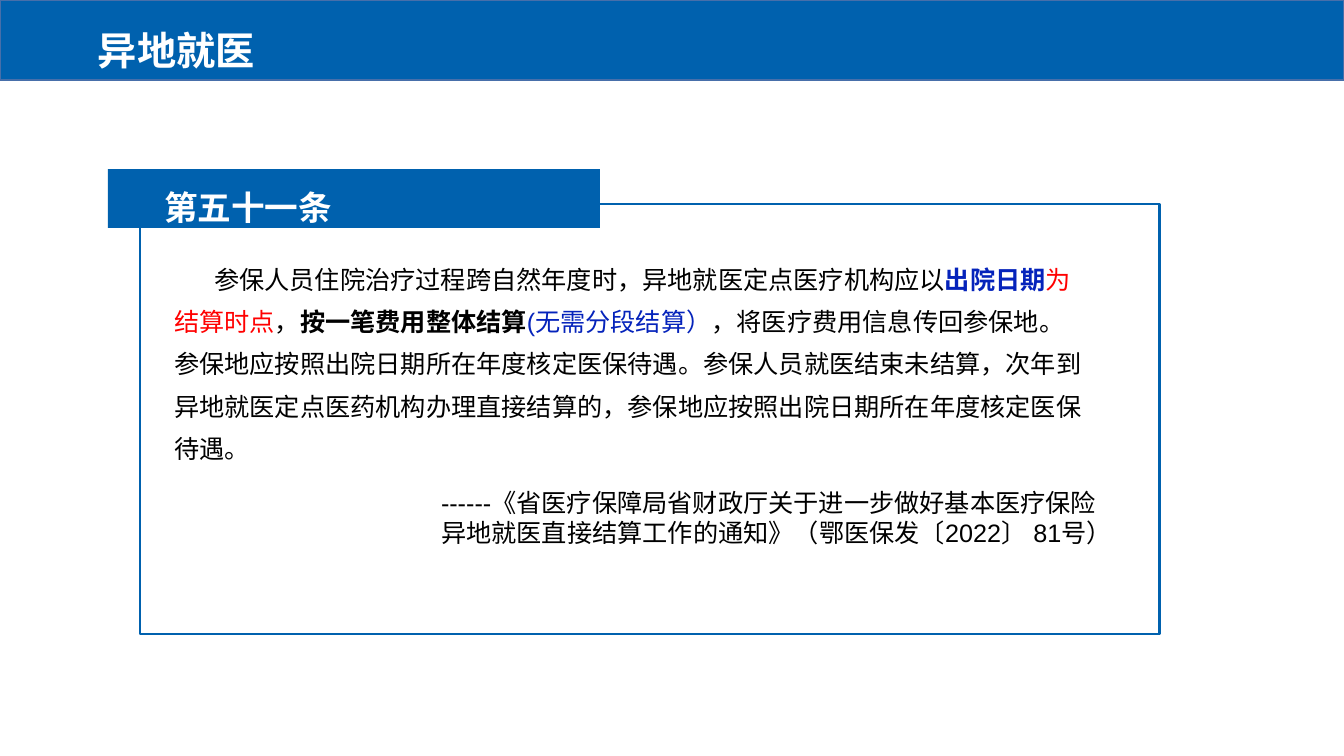
from lxml import etree
from pptx import Presentation
from pptx.dml.color import RGBColor
from pptx.enum.shapes import MSO_SHAPE
from pptx.enum.text import MSO_ANCHOR
from pptx.oxml.ns import qn
from pptx.util import Pt

PX = 914400 / 100.8
RECTANGLE = MSO_SHAPE.RECTANGLE
TOP, MIDDLE = MSO_ANCHOR.TOP, MSO_ANCHOR.MIDDLE
BLUE = RGBColor(0x00, 0x61, 0xAE)
BAND_EDGE = RGBColor(0x47, 0x6F, 0xAA)
INK_BLUE = RGBColor(0x05, 0x23, 0xBB)
RED = RGBColor(0xFF, 0x00, 0x00)
BLACK = RGBColor(0x00, 0x00, 0x00)
WHITE = RGBColor(0xFF, 0xFF, 0xFF)
LATIN, CJK = "Arial", "Noto Sans CJK SC"

ARTICLE = [
    ("参保人员住院治疗过程跨自然年度时，异地就医定点医疗机构应以", {}),
    ("出院日期", {"color": INK_BLUE, "bold": True}),
    ("为结算时点", {"color": RED}),
    ("，", {}),
    ("按一笔费用整体结算", {"bold": True}),
    ("(无需分段结算）", {"color": INK_BLUE}),
    ("，将医疗费用信息传回参保地。参保地应按照出院日期所在年度核定医保待遇。"
     "参保人员就医结束未结算，次年到异地就医定点医药机构办理直接结算的，"
     "参保地应按照出院日期所在年度核定医保待遇。", {}),
]
CITATION = [
    ("------《省医疗保障局省财政厅关于进一步做好基本医疗保险"
     "异地就医直接结算工作的通知》（鄂医保发", {}),
    ("〔", {"font": CJK}),
    ("2022", {}),
    ("〕", {"font": CJK}),
    (" 81号）", {}),
]


def px(length):
    """Turn a length in px into EMU."""
    return round(length * PX)


def add_rectangle(slide, box, fill=None, line=None, weight=1):
    """Add a plain rectangle with an optional fill and outline."""
    rectangle = slide.shapes.add_shape(RECTANGLE, *map(px, box))
    rectangle.shadow.inherit = False
    if fill is None:
        rectangle.fill.background()
    else:
        rectangle.fill.solid()
        rectangle.fill.fore_color.rgb = fill
    if line is None:
        rectangle.line.fill.background()
    else:
        rectangle.line.color.rgb = line
        rectangle.line.width = Pt(weight)


def add_text(slide, box, runs, size=18, color=BLACK, bold=False, spacing=1.0,
             indent=0, inset=(10, 5), anchor=TOP, wrap=True):
    """Add one paragraph whose runs may override colour, weight and font."""
    frame = slide.shapes.add_textbox(*map(px, box)).text_frame
    frame.word_wrap = wrap
    frame.vertical_anchor = anchor
    frame.margin_left = frame.margin_right = px(inset[0])
    frame.margin_top = frame.margin_bottom = px(inset[1])
    paragraph = frame.paragraphs[0]
    paragraph.line_spacing = spacing
    if indent:
        paragraph._p.get_or_add_pPr().set("indent", str(px(indent)))
    for words, style in runs:
        run = paragraph.add_run()
        run.text = words
        run.font.size = Pt(size)
        run.font.bold = style.get("bold", bold)
        run.font.color.rgb = style.get("color", color)
        run.font.name = style.get("font", LATIN)
        east_asian = etree.SubElement(run._r.get_or_add_rPr(), qn("a:ea"))
        east_asian.set("typeface", run.font.name)


def add_title_band(slide, box, title):
    """Draw the blue band across the top with the slide title."""
    left, top, width, height = box
    add_rectangle(slide, box, fill=BLUE, line=BAND_EDGE)
    add_text(slide, (left + 88, top + 10, 188, height), [(title, {})],
             size=28, color=WHITE, bold=True, anchor=MIDDLE, wrap=False)


def add_article_panel(slide, box, heading, article, citation):
    """Draw the framed article with its heading tab and its citation."""
    left, top, width, height = box
    add_text(slide, (left + 24, top + 43, 935, 225), article,
             spacing=1.4, indent=40)
    add_text(slide, (left + 291, top + 278, 693, 102), citation)
    add_rectangle(slide, box, line=BLUE, weight=2)
    add_rectangle(slide, (left - 32, top - 35, 492, 59), fill=BLUE)
    add_text(slide, (left + 24, top - 33, 168, 56), [(heading, {})], size=24,
             color=WHITE, bold=True, spacing=1.4, inset=(0, 0), wrap=False)


def main():
    """Build the slide and save it."""
    deck = Presentation()
    deck.slide_width, deck.slide_height = px(1344), px(756)
    slide = deck.slides.add_slide(deck.slide_layouts[6])
    add_title_band(slide, (0, 0, 1344, 80), "异地就医")
    add_article_panel(slide, (140, 204, 1020, 430), "第五十一条",
                      ARTICLE, CITATION)
    deck.save("out.pptx")


if __name__ == "__main__":
    main()
